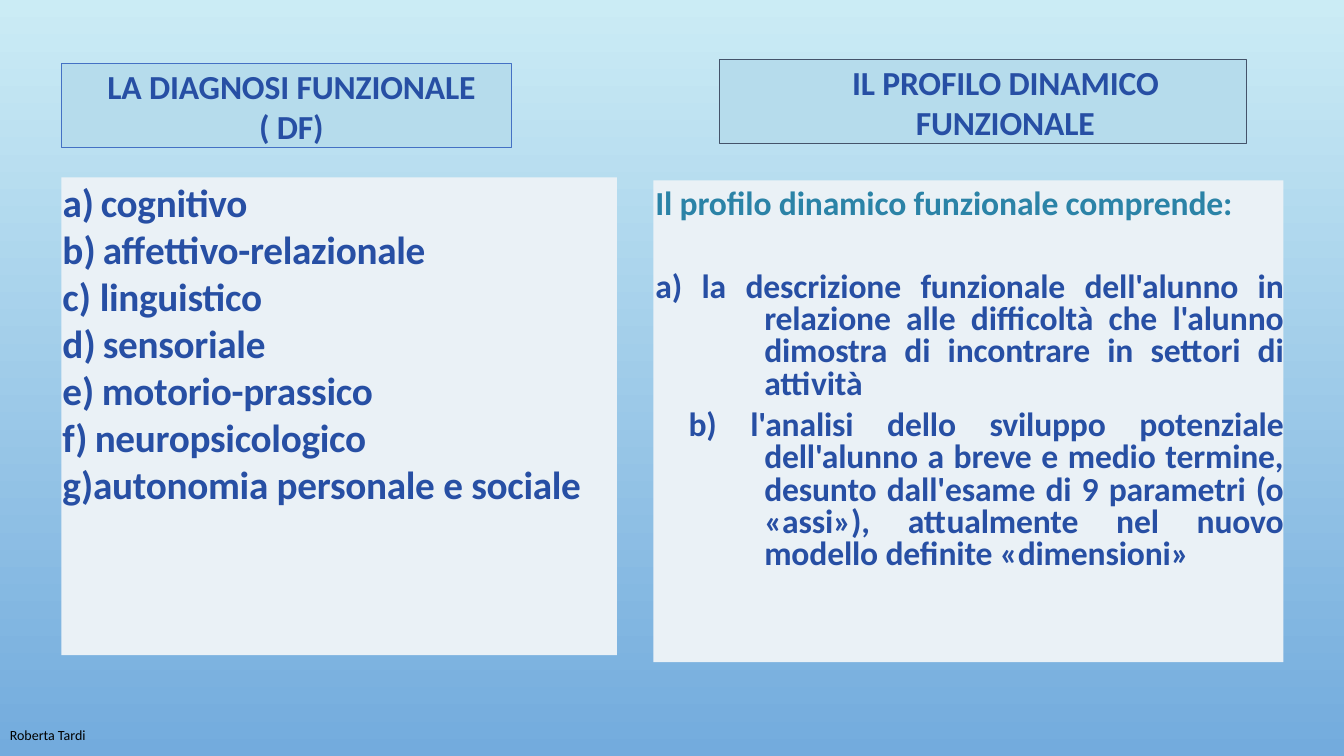
from dataclasses import dataclass

from lxml.etree import SubElement
from pptx import Presentation
from pptx.dml.color import RGBColor
from pptx.enum.shapes import MSO_SHAPE as Shape
from pptx.enum.text import MSO_ANCHOR as Anchor, PP_ALIGN as Align
from pptx.oxml.ns import qn
from pptx.util import Inches, Pt


@dataclass(frozen=True)
class Theme:
    font: str = "Calibri"
    sky_top: str = "CBECF5"
    sky_bottom: str = "73ABDD"
    panel: str = "EAF1F6"
    heading_fill: str = "B6DCEC"
    heading_line: str = "4471C4"
    dark_line: str = "44536A"
    text: str = "274FA4"
    accent: str = "2B83A7"
    author: str = "000000"
    list_size: float = 28
    body_size: float = 24
    author_size: float = 10


def rgb(value):
    return RGBColor.from_string(value)


def apply(target, values):
    for name, value in values.items():
        setattr(target, name, value)


class SlideBuilder:
    def __init__(self, slide, theme):
        self.slide = slide
        self.theme = theme

    def background(self):
        fill = self.slide.background.fill
        fill.gradient()
        fill.gradient_angle = 270
        for stop, color in zip(fill.gradient_stops, (self.theme.sky_top, self.theme.sky_bottom)):
            stop.color.rgb = rgb(color)

    def box(self, place, fill, line=None, anchor=Anchor.TOP, top=0, side=0):
        shape = self.slide.shapes.add_shape(Shape.RECTANGLE, *map(Inches, place))
        shape.shadow.inherit = False
        shape.fill.solid()
        shape.fill.fore_color.rgb = rgb(fill)
        if line:
            shape.line.color.rgb = rgb(line)
            shape.line.width = Pt(0.75)
        else:
            shape.line.fill.background()
        frame = shape.text_frame
        apply(frame, {
            "word_wrap": True, "vertical_anchor": anchor,
            "margin_left": Inches(side), "margin_right": Inches(side),
            "margin_top": Inches(top), "margin_bottom": 0,
        })
        return frame

    def paragraph(self, frame, text, size, color, indent=(0, 0), number=None,
                  bold=True, tracking=0, **layout):
        paragraph = frame.paragraphs[0]
        if paragraph.runs:
            paragraph = frame.add_paragraph()
        properties = paragraph._p.get_or_add_pPr()
        left, first = indent
        properties.set("marL", str(Inches(left)))
        properties.set("indent", str(Inches(first)))
        if number:
            bullet = SubElement(properties, qn("a:buAutoNum"), type="alphaLcParenR")
            if number > 1:
                bullet.set("startAt", str(number))
            tabs = SubElement(properties, qn("a:tabLst"))
            SubElement(tabs, qn("a:tab"), pos=str(Inches(left)), algn="l")
        apply(paragraph, {"alignment": Align.LEFT, **layout})
        run = paragraph.add_run()
        run.text = text
        apply(run.font, {"name": self.theme.font, "size": Pt(size), "bold": bold})
        run.font.color.rgb = rgb(color)
        run._r.get_or_add_rPr().set("spc", str(round(tracking * 100)))

    def heading(self, place, text, line, indent, anchor):
        frame = self.box(place, self.theme.heading_fill, line, anchor, top=0.02, side=0.05)
        self.paragraph(frame, text, self.theme.body_size, self.theme.text, (indent, 0),
                       tracking=-0.1, alignment=Align.CENTER)

    def lettered_list(self, place, items):
        frame = self.box(place, self.theme.panel, top=0.01)
        for text, indent, number in items:
            self.paragraph(frame, text, self.theme.list_size, self.theme.text, indent,
                           number, tracking=-0.2)

    def description(self, place, items):
        frame = self.box(place, self.theme.panel, top=0.09)
        for text, color, first, before in items:
            self.paragraph(frame, text, self.theme.body_size, color, (1.1, first),
                           tracking=-0.1, alignment=Align.JUSTIFY,
                           line_spacing=Pt(23.1), space_before=Pt(before))

    def author(self, place, text):
        frame = self.slide.shapes.add_textbox(*map(Inches, place)).text_frame
        apply(frame, {"word_wrap": True, "vertical_anchor": Anchor.MIDDLE})
        self.paragraph(frame, text, self.theme.author_size, self.theme.author, bold=False)


def main():
    presentation = Presentation()
    apply(presentation, {"slide_width": Inches(13.33), "slide_height": Inches(7.5)})
    theme = Theme()
    builder = SlideBuilder(presentation.slides.add_slide(presentation.slide_layouts[6]), theme)
    builder.background()
    builder.lettered_list((0.61, 1.76, 5.51, 4.74), [
        ("cognitivo", (0.39, -0.38), 1),
        ("affettivo-relazionale", (0.41, -0.4), 1),
        ("linguistico", (0.38, -0.37), 3),
        ("sensoriale", (0.41, -0.4), 3),
        ("motorio-prassico", (0.4, -0.39), 3),
        ("neuropsicologico", (0.33, -0.32), 3),
        ("autonomia personale e sociale", (0.01, 0), 3),
    ])
    builder.description((6.48, 1.79, 6.25, 4.78), [
        ("Il profilo dinamico funzionale comprende:", theme.accent, -1.08, 0),
        ("a) la descrizione funzionale dell'alunno in relazione alle difficoltà che "
         "l'alunno dimostra di incontrare in settori di attività", theme.text, -1.08, 36.1),
        ("b) l'analisi dello sviluppo potenziale dell'alunno a breve e medio termine, "
         "desunto dall'esame di 9 parametri (o «assi»), attualmente nel nuovo modello "
         "definite «dimensioni»", theme.text, -0.75, 6.5),
    ])
    builder.heading((7.14, 0.59, 5.22, 0.83), "IL PROFILO DINAMICO FUNZIONALE",
                    theme.dark_line, 0.44, Anchor.TOP)
    builder.heading((0.61, 0.63, 4.46, 0.83), "LA DIAGNOSI FUNZIONALE ( DF)",
                    theme.heading_line, 0.1, Anchor.MIDDLE)
    builder.author((0, 7.09, 7.3, 0.4), "Roberta Tardi")
    presentation.save("out.pptx")


if __name__ == "__main__":
    main()
